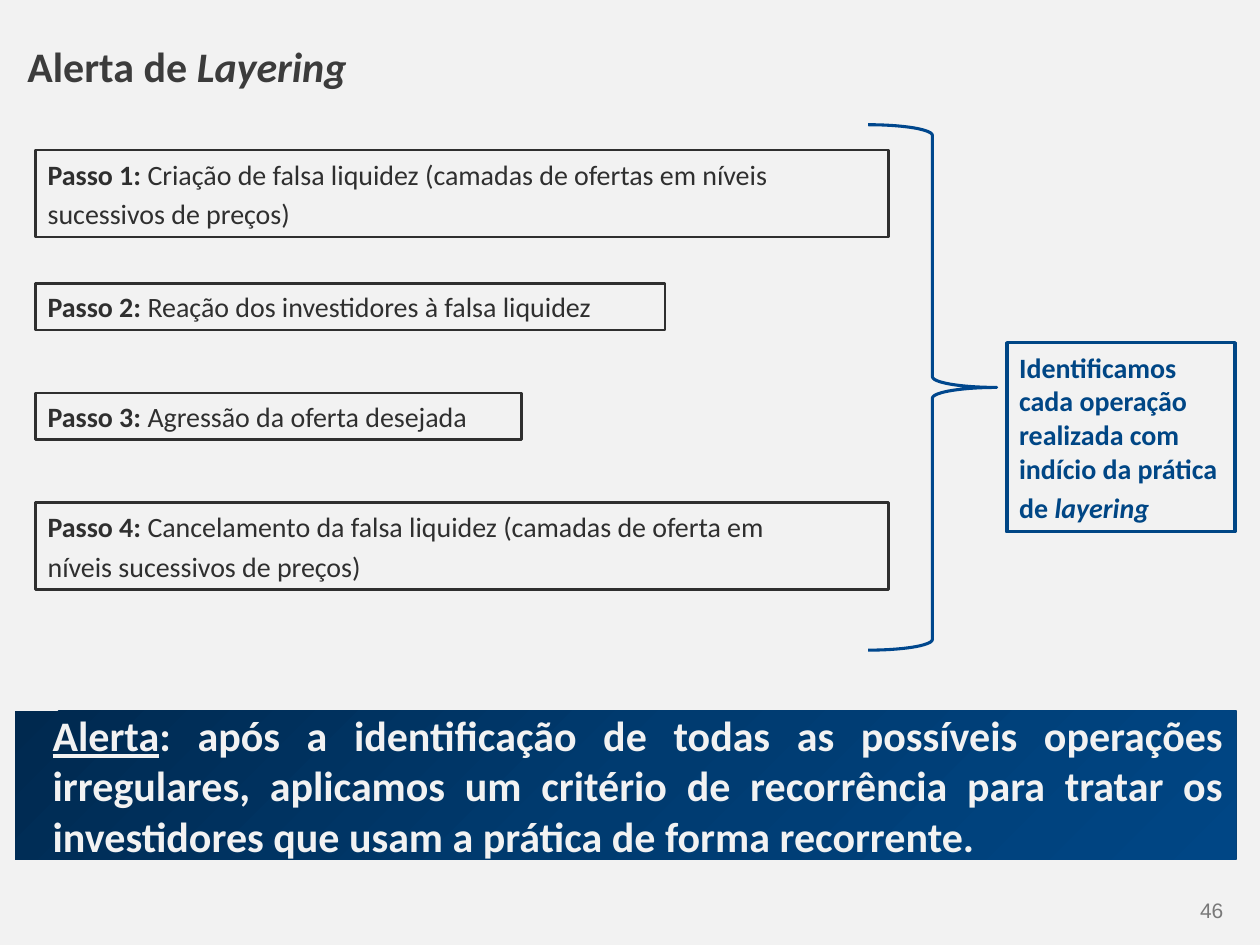
import copy

import pptx
import pptx.dml.color
import pptx.enum.shapes
import pptx.enum.text
import pptx.util

Inches, Pt = pptx.util.Inches, pptx.util.Pt
SHAPE = pptx.enum.shapes.MSO_SHAPE
ALIGN = pptx.enum.text.PP_ALIGN
ANCHOR = pptx.enum.text.MSO_ANCHOR
AUTO_SIZE = pptx.enum.text.MSO_AUTO_SIZE

PAPER, INK, NAVY = "F2F2F2", "2F2F2F", "004685"
BOLD, ITALIC, UNDERLINE = "b", "i", "u"

STEP_LEFT = 0.28
STEPS = [  # top, width, height, label, lines
    (1.19, 6.77, 0.69, "Passo 1: ",
     ["Criação de falsa liquidez (camadas de ofertas em níveis", "sucessivos de preços)"]),
    (2.25, 5, 0.37, "Passo 2: ", ["Reação dos investidores à falsa liquidez"]),
    (3.12, 3.86, 0.37, "Passo 3: ", ["Agressão da oferta desejada"]),
    (3.99, 6.77, 0.69, "Passo 4: ",
     ["Cancelamento da falsa liquidez (camadas de oferta em", "níveis sucessivos de preços)"]),
]


def color(hex_string):
    return pptx.dml.color.RGBColor.from_string(hex_string)


def add_outline(slide, kind, box, line_color, line_width):
    shape = slide.shapes.add_shape(kind, *map(Inches, box))
    shape.shadow.inherit = False
    shape.fill.background()
    if line_color:
        shape.line.color.rgb = color(line_color)
        shape.line.width = Pt(line_width)
    else:
        shape.line.fill.background()
    return shape


def write(shape, paragraphs, size, ink, align=ALIGN.LEFT, font="Calibri"):
    """Each paragraph is a list of (text, style) runs; style combines b, i and u."""
    frame = shape.text_frame
    frame.word_wrap = True
    frame.vertical_anchor = ANCHOR.MIDDLE
    for index, runs in enumerate(paragraphs):
        paragraph = frame.add_paragraph() if index else frame.paragraphs[0]
        paragraph.alignment = align
        if index:
            paragraph.space_before = Pt(size * 0.2)
        for text, style in runs:
            run = paragraph.add_run()
            run.text = text
            run.font.name = font
            run.font.size = Pt(size)
            run.font.color.rgb = color(ink)
            run.font.bold = BOLD in style
            run.font.italic = ITALIC in style
            run.font.underline = UNDERLINE in style
    return frame


def add_title(slide, box):
    title = slide.shapes.add_textbox(*map(Inches, box))
    write(title, [[("Alerta de ", BOLD), ("Layering", BOLD + ITALIC)]], 24, "3C3C3C")


def add_steps(slide, left):
    for top, width, height, label, lines in STEPS:
        step = add_outline(slide, SHAPE.RECTANGLE, (left, top, width, height), INK, 1.5)
        paragraphs = [[(line, "")] for line in lines]
        paragraphs[0].insert(0, (label, BOLD))
        write(step, paragraphs, 16, INK).auto_size = AUTO_SIZE.SHAPE_TO_FIT_TEXT


def add_conclusion(slide, box):
    conclusion = add_outline(slide, SHAPE.RECTANGLE, box, NAVY, 2)
    frame = write(conclusion, [
        [("Identificamos cada operação realizada com indício da prática", BOLD)],
        [("de ", BOLD), ("layering", BOLD + ITALIC)],
    ], 16, NAVY)
    frame.auto_size = AUTO_SIZE.SHAPE_TO_FIT_TEXT


def fill_diagonally(shape, stops):
    """Gradient from top left to bottom right through (position, hex) stops."""
    shape.fill.gradient()
    shape.fill.gradient_angle = 315
    first = shape.fill.gradient_stops[0]._gs
    for _ in range(len(stops) - len(shape.fill.gradient_stops)):
        first.addnext(copy.deepcopy(first))
    for stop, (position, hex_string) in zip(shape.fill.gradient_stops, stops):
        stop.position = position
        stop.color.rgb = color(hex_string)


def add_alert(slide, box):
    alert = add_outline(slide, SHAPE.RECTANGLE, box, None, 0)
    fill_diagonally(alert, [(0, "00294F"), (0.5, "003B70"), (1, NAVY)])
    frame = write(alert, [[
        ("Alerta", BOLD + UNDERLINE),
        (": após a identificação de todas as possíveis operações irregulares, "
         "aplicamos um critério de recorrência para tratar os investidores "
         "que usam a prática de forma recorrente.", BOLD),
    ]], 24, PAPER, ALIGN.JUSTIFY)
    properties = frame.paragraphs[0]._p.get_or_add_pPr()
    properties.set("marL", str(Inches(0.2)))
    properties.set("indent", "0")


def add_page_number(slide, box):
    number = slide.shapes.add_textbox(*map(Inches, box))
    frame = write(number, [[("46", "")]], 12, "797979", ALIGN.RIGHT, "Arial")
    frame.margin_left = frame.margin_right = frame.margin_top = frame.margin_bottom = 0
    frame.vertical_anchor = ANCHOR.TOP
    frame.word_wrap = False


def main():
    deck = pptx.Presentation()
    deck.slide_width, deck.slide_height = Inches(10), Inches(7.5)
    slide = deck.slides.add_slide(deck.slide_layouts[6])
    slide.background.fill.solid()
    slide.background.fill.fore_color.rgb = color(PAPER)

    add_page_number(slide, (9.44, 7.12, 0.27, 0.2))
    add_title(slide, (0.12, 0.21, 7.56, 0.63))
    add_alert(slide, (0.12, 5.64, 9.69, 1.18))
    add_outline(slide, SHAPE.RIGHT_BRACE, (6.89, 0.99, 1.02, 4.17), "00478D", 1.75)
    add_conclusion(slide, (7.99, 2.72, 1.81, 1.5))
    add_steps(slide, STEP_LEFT)
    deck.save("out.pptx")


if __name__ == "__main__":
    main()
